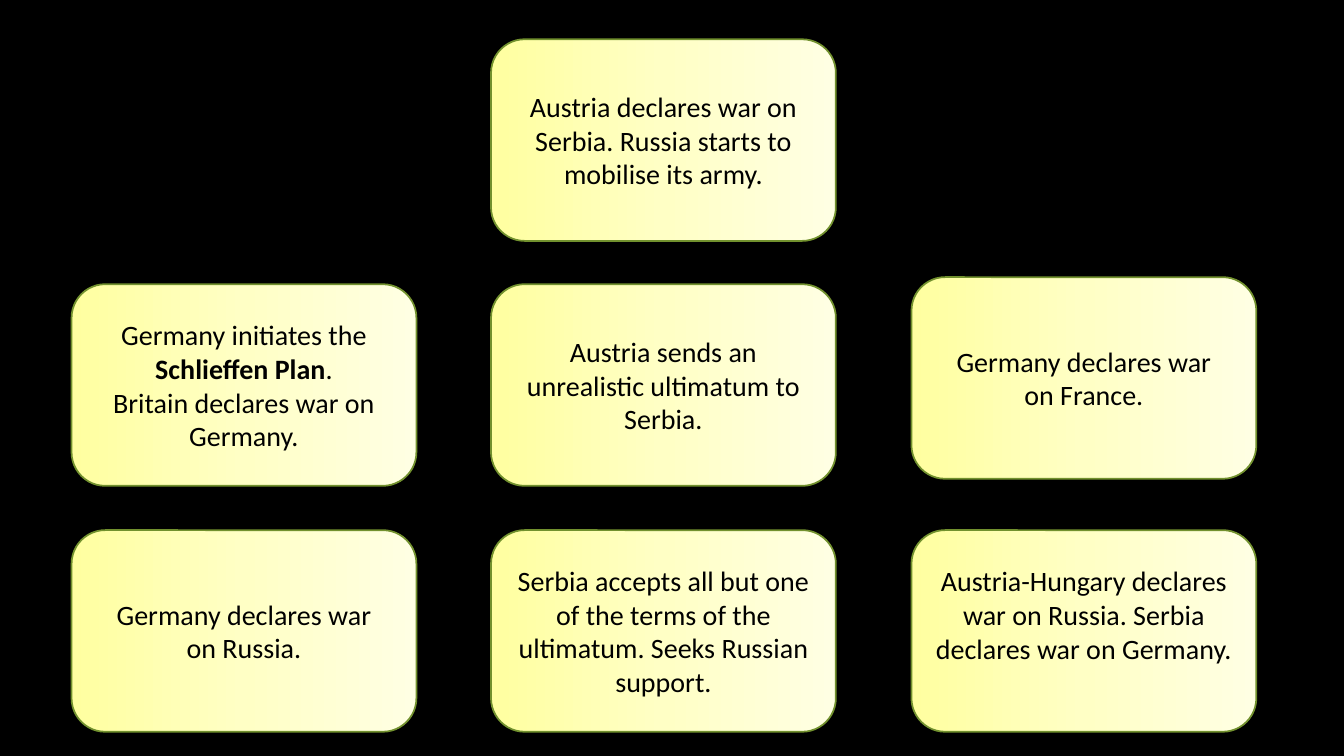
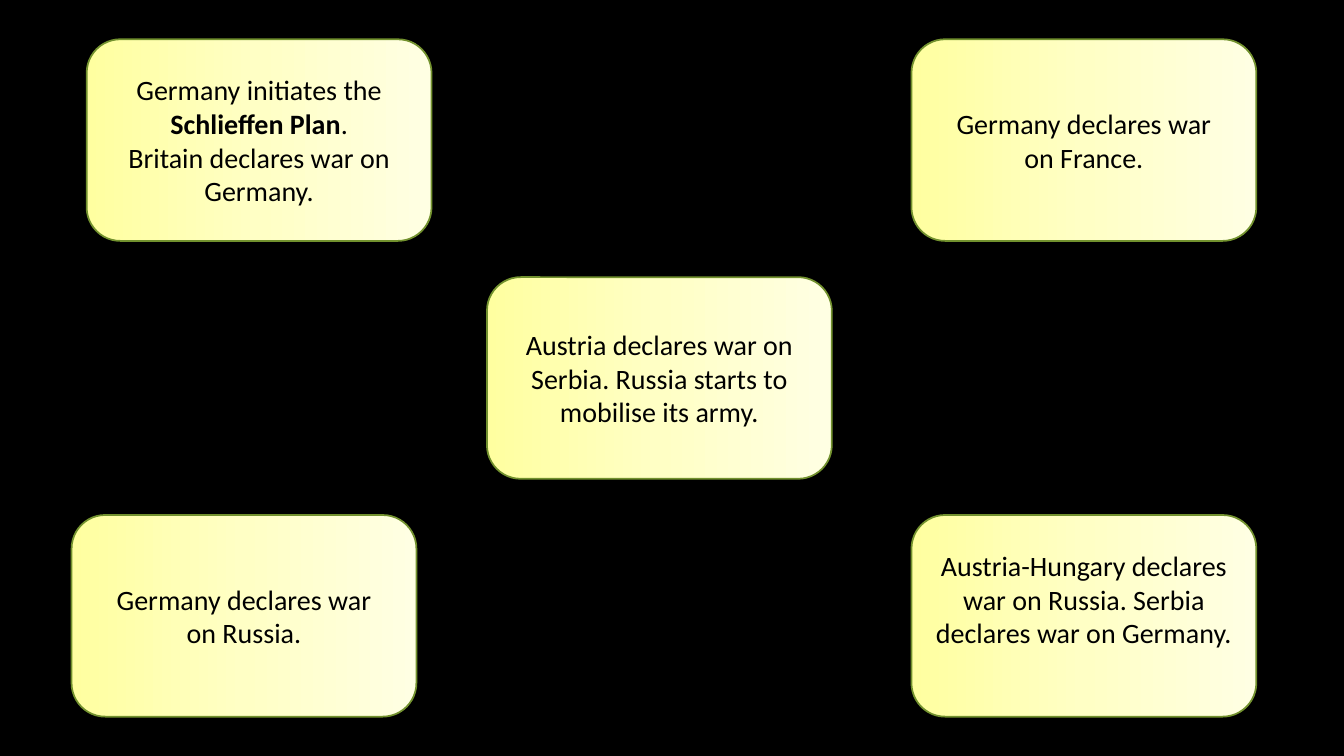
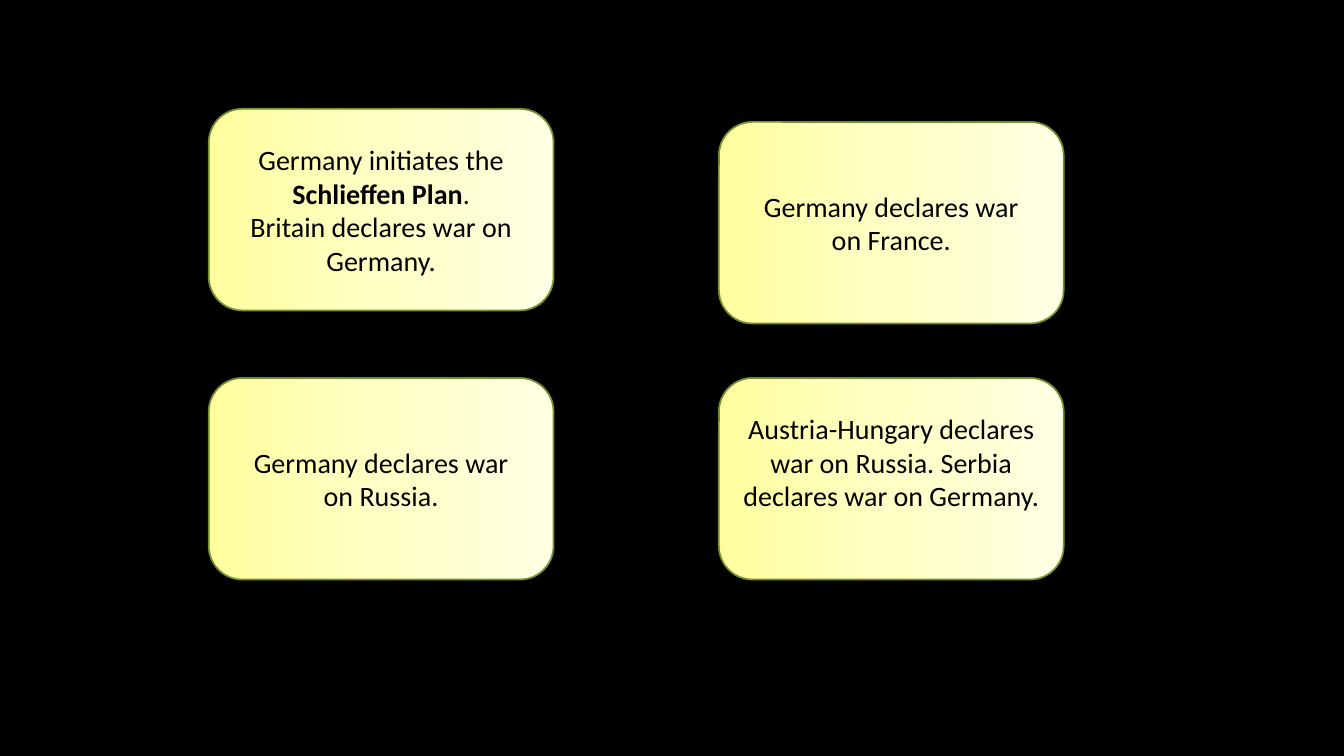
from copy import deepcopy
from dataclasses import dataclass

from pptx import Presentation
from pptx.dml.color import RGBColor
from pptx.enum.shapes import MSO_SHAPE as Shape
from pptx.enum.text import MSO_ANCHOR as Anchor, PP_ALIGN as Align
from pptx.oxml.ns import qn
from pptx.slide import Slide
from pptx.util import Inches, Pt

# Shared look
BLACK, GREEN = "000000", "72912E"
STOPS = ((0, "FFFFA0"), (0.5, "FFFFC5"), (1, "FFFFE3"))
WIDE, HIGH = 3.42, 2
FONT = {"name": "Calibri", "size": Pt(20)}
FRAME = {"word_wrap": True, "vertical_anchor": Anchor.MIDDLE}


@dataclass(frozen=True)
class Event:
    lines: tuple[str, ...]
    bold: str = ""
    foot: float = 0.05


@dataclass(frozen=True)
class Card:
    event: Event
    left: float
    top: float


# Events told on the cards
DEMAND = Event(("Austria sends an unrealistic ultimatum to Serbia.",))
REPLY = Event(("Serbia accepts all but one of the terms of the ultimatum. "
               "Seeks Russian support.",))
START = Event(("Austria declares war on Serbia. "
               "Russia starts to mobilise its army.",))
RUSSIA = Event(("Germany declares war", "on Russia."))
FRANCE = Event(("Germany declares war", "on France."))
PLAN = Event(("Germany initiates the Schlieffen Plan.",
              "Britain declares war on Germany."), bold="Schlieffen Plan")
ALLIES = Event(("Austria-Hungary declares war on Russia. "
                "Serbia declares war on Germany.",), foot=0.38)

# Card places, slide by slide
LEFT, MID, RIGHT = 0.71, 4.87, 9.04
TOP, LOW = 0.39, 5.26
DECK = (
    (Card(DEMAND, MID, 2.82), Card(REPLY, MID, LOW), Card(START, MID, TOP),
     Card(RUSSIA, LEFT, LOW), Card(FRANCE, RIGHT, 2.75),
     Card(PLAN, LEFT, 2.82), Card(ALLIES, RIGHT, LOW)),
    (Card(START, 4.83, 2.75), Card(RUSSIA, LEFT, 5.11),
     Card(FRANCE, RIGHT, TOP), Card(PLAN, 0.86, TOP),
     Card(ALLIES, RIGHT, 5.11)),
    (Card(RUSSIA, 2.07, 3.75), Card(FRANCE, 7.13, 1.21),
     Card(PLAN, 2.07, 1.08), Card(ALLIES, 7.13, 3.75)),
)


def tint(code: str) -> RGBColor:
    return RGBColor.from_string(code)


def apply(item, values: dict) -> None:
    for name, value in values.items():
        setattr(item, name, value)


def shade(box) -> None:
    """Fill with the pale yellow blend, left to right."""
    box.fill.gradient()
    box.fill.gradient_angle = 0
    group = next(box._element.iter(qn("a:gsLst")))
    group.append(deepcopy(group[-1]))
    for stop, (place, code) in zip(box.fill.gradient_stops, STOPS):
        stop.position = place
        stop.color.rgb = tint(code)


def write(box, event: Event) -> None:
    frame = box.text_frame
    apply(frame, FRAME | {"margin_bottom": Inches(event.foot)})
    para = frame.paragraphs[0]
    para.alignment = Align.CENTER
    for row, line in enumerate(event.lines):
        if row:
            para.add_line_break()
        parts = line.partition(event.bold) if event.bold else (line,)
        for text in filter(None, parts):
            run = para.add_run()
            run.text = text
            apply(run.font, FONT | {"bold": text == event.bold})
            run.font.color.rgb = tint(BLACK)


def draw(slide: Slide, card: Card) -> None:
    box = slide.shapes.add_shape(
        Shape.ROUNDED_RECTANGLE, Inches(card.left), Inches(card.top),
        Inches(WIDE), Inches(HIGH))
    box.shadow.inherit = False
    shade(box)
    box.line.color.rgb = tint(GREEN)
    box.line.width = Pt(1.25)
    write(box, card.event)


def main() -> None:
    deck = Presentation()
    apply(deck, {"slide_width": Inches(13.33), "slide_height": Inches(7.5)})
    back = deck.slide_master.background.fill
    back.solid()
    back.fore_color.rgb = tint(BLACK)
    for cards in DECK:
        slide = deck.slides.add_slide(deck.slide_layouts[6])
        for card in cards:
            draw(slide, card)
    deck.save("out.pptx")


if __name__ == "__main__":
    main()
